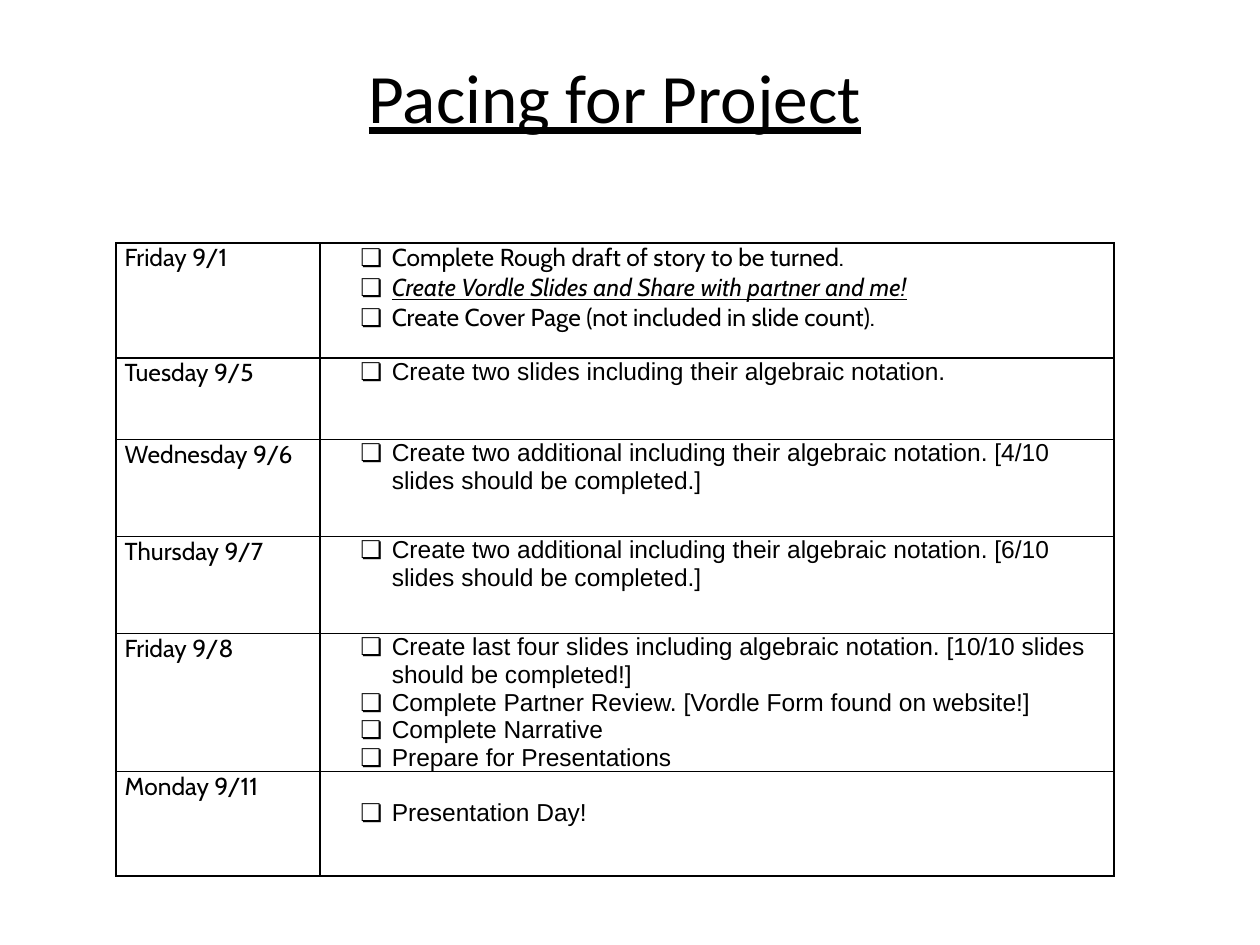
import pptx
import pptx.dml.color
import pptx.enum.text
import pptx.oxml
import pptx.oxml.ns
import pptx.util

Inches = pptx.util.Inches
Pt = pptx.util.Pt


def color(hex_value):
    return pptx.dml.color.RGBColor.from_string(hex_value)


def add_xml(parent, xml):
    """Append a DrawingML element written without its namespace declaration."""
    declaration = " " + pptx.oxml.ns.nsdecls("a")
    end = min(i for i in (xml.find(" "), xml.find(">")) if i > 0)
    parent.append(pptx.oxml.parse_xml(xml[:end] + declaration + xml[end:]))


class PacingSlide:
    ink = "000000"
    day_font = "Cabin"
    text_size = Pt(14)
    bullet = "❏"
    border = Pt(1)

    def __init__(self, deck):
        self.slide = deck.slides.add_slide(deck.slide_layouts[5])

    def add_text(self, paragraph, text, **formats):
        run = paragraph.add_run()
        run.text = text
        for name, value in formats.items():
            setattr(run.font, name, value)
        run.font.color.rgb = color(self.ink)

    def title(self, text, left, top, width, height):
        heading = self.slide.shapes.title
        place = {"left": left, "top": top, "width": width, "height": height}
        for name, value in place.items():
            setattr(heading, name, Inches(value))
        frame = heading.text_frame
        frame.word_wrap = True
        frame.auto_size = pptx.enum.text.MSO_AUTO_SIZE.NONE
        frame.vertical_anchor = pptx.enum.text.MSO_ANCHOR.MIDDLE
        line = frame.paragraphs[0]
        line.alignment = pptx.enum.text.PP_ALIGN.CENTER
        self.add_text(line, text, name="Calibri", size=Pt(39.6), underline=True)

    def style_cell(self, cell, top_margin=0):
        margins = {"left": 0.07, "right": 0.07, "top": top_margin, "bottom": 0}
        for side, value in margins.items():
            setattr(cell, f"margin_{side}", Inches(value))
        cell.vertical_anchor = pptx.enum.text.MSO_ANCHOR.TOP
        properties = cell._tc.get_or_add_tcPr()
        for side in "LRTB":
            add_xml(properties,
                    f'<a:ln{side} w="{self.border}"><a:solidFill>'
                    f'<a:srgbClr val="{self.ink}"/></a:solidFill></a:ln{side}>')
        cell.fill.background()

    def add_task(self, paragraph, text, **formats):
        properties = paragraph._p.get_or_add_pPr()
        properties.set("marL", str(Inches(0.5)))
        properties.set("indent", str(-Inches(0.25)))
        add_xml(properties, f'<a:buClr><a:srgbClr val="{self.ink}"/></a:buClr>')
        add_xml(properties, '<a:buFont typeface="Arial"/>')
        add_xml(properties, f'<a:buChar char="{self.bullet}"/>')
        self.add_text(paragraph, text, size=self.text_size, **formats)

    def schedule(self, days, left, top, widths):
        table = self.slide.shapes.add_table(
            len(days), len(widths), Inches(left), Inches(top),
            Inches(sum(widths)), Inches(sum(day[1] for day in days))).table
        table.first_row = table.horz_banding = False
        for column, width in zip(table.columns, widths):
            column.width = Inches(width)
        for row, (day, height, font, top_margin, tasks) in zip(table.rows, days):
            row.height = Inches(height)
            day_cell, task_cell = row.cells
            self.style_cell(day_cell)
            self.add_text(day_cell.text_frame.paragraphs[0], day,
                          name=self.day_font, size=self.text_size)
            self.style_cell(task_cell, top_margin)
            frame = task_cell.text_frame
            for number, (task, formats) in enumerate(tasks):
                paragraph = frame.add_paragraph() if number else frame.paragraphs[0]
                self.add_task(paragraph, task, name=font, **formats)


def progress_task(done):
    return (f"Create two additional including their algebraic notation. "
            f"[{done}/10 slides should be completed.]", {})


# Day, row height, task font, top margin of the tasks, tasks with their emphasis
DAYS = [
    ("Friday 9/1", 0.91, "Cabin", 0, [
        ("Complete Rough draft of story to be turned.", {}),
        ("Create Vordle Slides and Share with partner and me!",
         {"italic": True, "underline": True}),
        ("Create Cover Page (not included in slide count).", {})]),
    ("Tuesday 9/5", 0.65, "Arial", 0, [
        ("Create two slides including their algebraic notation.", {})]),
    ("Wednesday 9/6", 0.77, "Arial", 0, [progress_task(4)]),
    ("Thursday 9/7", 0.77, "Arial", 0, [progress_task(6)]),
    ("Friday 9/8", 1.09, "Arial", 0, [
        ("Create last four slides including algebraic notation. "
         "[10/10 slides should be completed!]", {}),
        ("Complete Partner Review. [Vordle Form found on website!]", {}),
        ("Complete Narrative", {}),
        ("Prepare for Presentations", {})]),
    ("Monday 9/11", 0.83, "Arial", 0.22, [("Presentation Day!", {})]),
]


def main():
    deck = pptx.Presentation()
    deck.slide_width, deck.slide_height = Inches(10), Inches(7.5)
    pacing = PacingSlide(deck)

    # Heading
    pacing.title("Pacing for Project", 0.38, -0.18, 9, 1.88)

    # Day-by-day schedule
    pacing.schedule(DAYS, 0.92, 1.93, [1.62, 6.3])

    deck.save("out.pptx")


if __name__ == "__main__":
    main()
